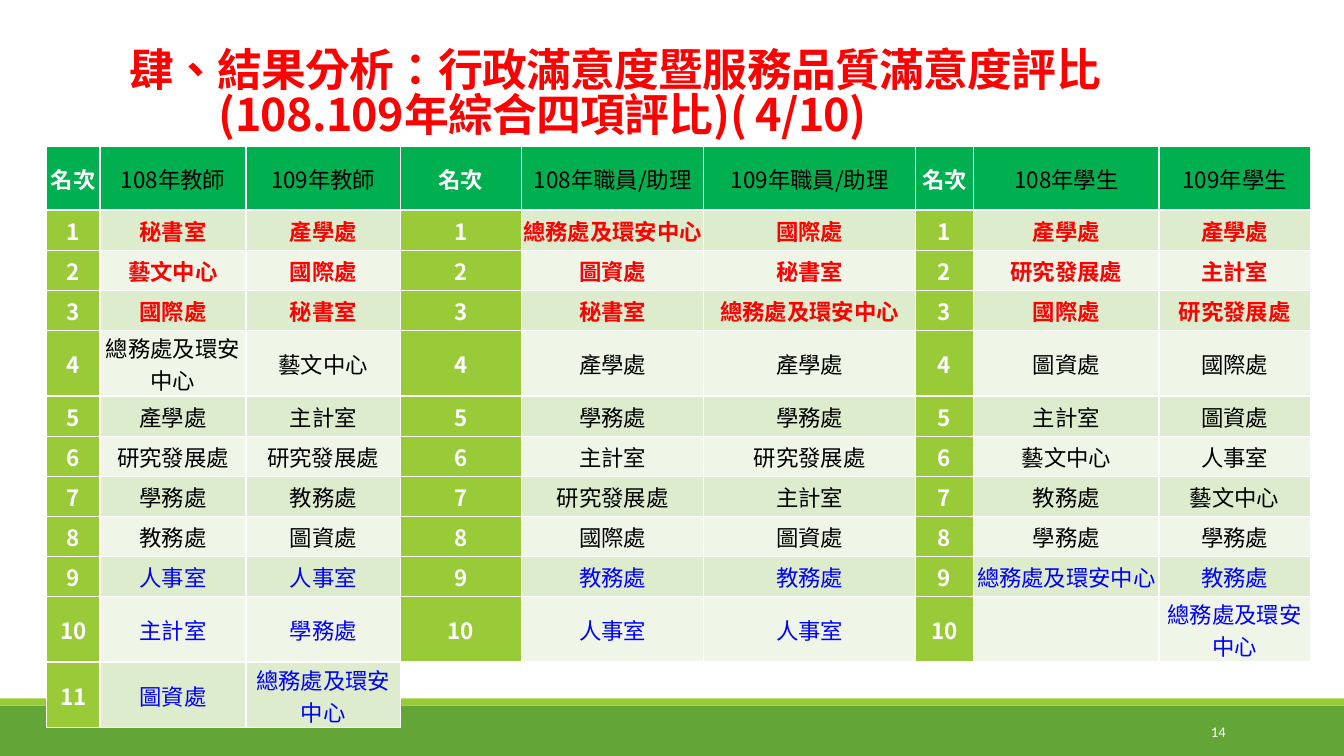
from lxml import etree
from pptx import Presentation
from pptx.dml.color import RGBColor
from pptx.enum.shapes import MSO_SHAPE
from pptx.enum.text import MSO_ANCHOR, MSO_AUTO_SIZE, PP_ALIGN
from pptx.oxml.ns import qn
from pptx.util import Cm, Pt

RECT = MSO_SHAPE.RECTANGLE
MIDDLE, BOTTOM = MSO_ANCHOR.MIDDLE, MSO_ANCHOR.BOTTOM
LEFT, CENTER, RIGHT = PP_ALIGN.LEFT, PP_ALIGN.CENTER, PP_ALIGN.RIGHT
FIXED = MSO_AUTO_SIZE.NONE
SANS = "Noto Sans CJK SC"
PLAIN = "{2D5ABB26-0587-4C30-8999-92F81FD0307C}"

COLORS = {
    "white": "FFFFFF", "black": "000000", "red": "FF0000", "blue": "0000FF",
    "head": "00B050", "rank": "99CB38", "odd": "DEECCE", "even": "EFF6E8",
    "band": "63A537",
}
TITLE = "肆、結果分析：行政滿意度暨服務品質滿意度評比(108.109年綜合四項評比)( 4/10)"
WIDTHS = [1.35, 3.68, 3.89, 3.05, 4.6, 5.33, 1.47, 4.67, 3.81]
HEIGHTS = {0: 1.62, 4: 1.65, 10: 1.65, 11: 1.65}
HEADS = ["108年教師", "109年教師", "108年職員/助理", "109年職員/助理", "108年學生", "109年學生"]
UNITS = [
    ["秘書室", "產學處", "總務處及環安中心", "國際處", "產學處", "產學處"],
    ["藝文中心", "國際處", "圖資處", "秘書室", "研究發展處", "主計室"],
    ["國際處", "秘書室", "秘書室", "總務處及環安中心", "國際處", "研究發展處"],
    ["總務處及環安中心", "藝文中心", "產學處", "產學處", "圖資處", "國際處"],
    ["產學處", "主計室", "學務處", "學務處", "主計室", "圖資處"],
    ["研究發展處", "研究發展處", "主計室", "研究發展處", "藝文中心", "人事室"],
    ["學務處", "教務處", "研究發展處", "主計室", "教務處", "藝文中心"],
    ["教務處", "圖資處", "國際處", "圖資處", "學務處", "學務處"],
    ["人事室", "人事室", "教務處", "教務處", "總務處及環安中心", "教務處"],
    ["主計室", "學務處", "人事室", "人事室", "", "總務處及環安中心"],
    ["圖資處", "總務處及環安中心"],
]


def rgb(name):
    """Return the named colour."""
    return RGBColor.from_string(COLORS[name])


def write(frame, text, size=16, color="black", bold=False, font=SANS, align=CENTER):
    """Put one formatted run in a frame and return its paragraph and run."""
    para = frame.paragraphs[0]
    para.alignment = align
    run = para.add_run()
    run.text = text
    run.font.size, run.font.bold, run.font.name = Pt(size), bold, font
    run.font.color.rgb = rgb(color)
    run.font._element.set("lang", "zh-TW")
    etree.SubElement(run.font._element, qn("a:ea"), typeface=font)
    return para, run


def add_band(slide, top, height, color):
    """Draw a full-width footer band."""
    band = slide.shapes.add_shape(RECT, Cm(0), Cm(top), Cm(33.87), Cm(height))
    band.shadow.inherit = False
    band.fill.solid()
    band.fill.fore_color.rgb = rgb(color)
    band.line.fill.background()


def add_title(slide):
    """Fill the title placeholder with a hanging indent."""
    title = slide.shapes.title
    title.left, title.top, title.width, title.height = Cm(3), Cm(0), Cm(28.78), Cm(3.68)
    frame = title.text_frame
    frame.word_wrap, frame.auto_size, frame.vertical_anchor = True, FIXED, BOTTOM
    para, run = write(frame, TITLE, size=32, color="red", bold=True, align=LEFT)
    para.line_spacing = 0.85
    props = para._p.get_or_add_pPr()
    props.set("marL", str(Cm(2.26)))
    props.set("indent", str(Cm(-2.26)))
    run.font._element.set("spc", "-50")


def add_page(slide):
    """Add the page number."""
    box = slide.shapes.add_textbox(Cm(27.51), Cm(17.93), Cm(3.63), Cm(1.02))
    frame = box.text_frame
    frame.word_wrap, frame.vertical_anchor = True, MIDDLE
    write(frame, "14", size=10.5, color="white", font="Calibri", align=RIGHT)


def add_edges(cell, row):
    """Give a cell white borders, thicker under the head row."""
    props = cell._tc.get_or_add_tcPr()
    thick = {0: "lnB", 1: "lnT"}.get(row)
    for spot, side in enumerate(("lnL", "lnR", "lnT", "lnB")):
        width = Pt(1.5) if side == thick else Pt(1)
        edge = etree.Element(qn("a:" + side), w=str(width))
        fill = etree.SubElement(edge, qn("a:solidFill"))
        etree.SubElement(fill, qn("a:srgbClr"), val=COLORS["white"])
        props.insert(spot, edge)


def fill_cell(cell, row, text, rank):
    """Write and colour one cell by its row and role."""
    cell.vertical_anchor = MIDDLE
    cell.margin_left = cell.margin_right = cell.margin_top = Cm(0.03)
    cell.margin_bottom = Cm(0)
    if row == 0:
        back = "head"
    else:
        back = "rank" if rank else ("odd" if row % 2 else "even")
    cell.fill.solid()
    cell.fill.fore_color.rgb = rgb(back)
    add_edges(cell, row)
    top = 1 <= row <= 3
    ink = "white" if rank else "red" if top else "blue" if row >= 9 else "black"
    if text:
        write(cell.text_frame, text, color=ink, bold=rank or top)


def add_ranks(slide):
    """Build the table of ranks, two years for each of three groups."""
    rows = [HEADS] + UNITS
    sizes = [HEIGHTS.get(row, 1.01) for row in range(len(rows))]
    frame = slide.shapes.add_table(
        len(rows), len(WIDTHS), Cm(1.17), Cm(3.68), Cm(sum(WIDTHS)), Cm(sum(sizes)))
    table = frame.table
    table.first_row = table.horz_banding = False
    table._tbl.tblPr.find(qn("a:tableStyleId")).text = PLAIN
    for col, width in zip(table.columns, WIDTHS):
        col.width = Cm(width)
    for row, names in enumerate(rows):
        table.rows[row].height = Cm(sizes[row])
        label = str(row) if row else "名次"
        for pair in range(0, len(names), 2):
            first = pair // 2 * 3
            for step, text in enumerate([label] + names[pair:pair + 2]):
                fill_cell(table.cell(row, first + step), row, text, step == 0)


def main():
    """Build and save the slide."""
    deck = Presentation()
    deck.slide_width, deck.slide_height = Cm(33.87), Cm(19.05)
    slide = deck.slides.add_slide(deck.slide_layouts[5])
    add_band(slide, 17.78, 1.27, "band")
    add_band(slide, 17.6, 0.18, "rank")
    add_page(slide)
    add_title(slide)
    add_ranks(slide)
    deck.save("out.pptx")


if __name__ == "__main__":
    main()
